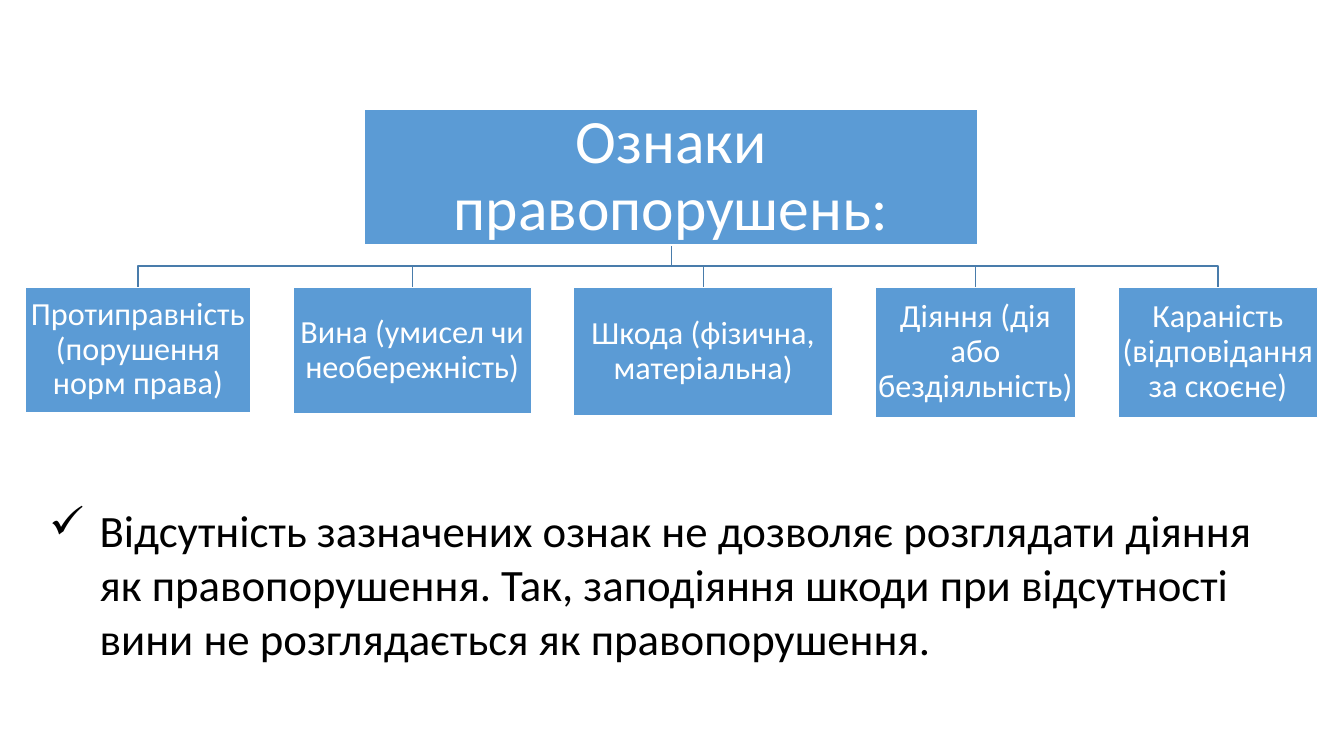
from lxml import etree
from pptx import Presentation
from pptx.dml.color import RGBColor
from pptx.enum import shapes, text
from pptx.oxml.ns import qn
from pptx.util import Inches, Pt

FONT = "Calibri"
BLUE, EDGE, WHITE, BLACK = "5B9BD5", "497CAB", "FFFFFF", "000000"
ROOT = (3.61, 1.08, 6.09, 1.35)
TRUNK, FORK, TOP = 6.66, 2.64, 2.85
LEFT, GAP = 0.25, 0.42
SIGNS = [
    ("Протиправність (порушення норм права)", 2.24, 1.24),
    ("Вина (умисел чи необережність)", 2.36, 1.26),
    ("Шкода (фізична, матеріальна)", 2.57, 1.27),
    ("Діяння (дія або бездіяльність)", 1.99, 1.29),
    ("Караність (відповідання за скоєне)", 1.98, 1.29),
]
NOTE = ("Відсутність зазначених ознак не дозволяє розглядати діяння як "
        "правопорушення. Так, заподіяння шкоди при відсутності вини не "
        "розглядається як правопорушення.")


def color(code):
    return RGBColor.from_string(code)


def write(frame, words, size, ink):
    """Fill the frame with one paragraph and return that paragraph."""
    frame.word_wrap = True
    para = frame.paragraphs[0]
    para.text = words
    font = para.runs[0].font
    font.name, font.size = FONT, Pt(size)
    font.color.rgb = color(ink)
    return para


def add_box(slide, place, words, size, inset):
    box = slide.shapes.add_shape(
        shapes.MSO_SHAPE.RECTANGLE, *map(Inches, place))
    box.shadow.inherit = False
    box.fill.solid()
    box.fill.fore_color.rgb = color(BLUE)
    box.line.color.rgb = color(WHITE)
    box.line.width = Pt(1)
    frame = box.text_frame
    frame.margin_left = frame.margin_right = Inches(inset)
    frame.margin_top = frame.margin_bottom = Inches(inset)
    frame.vertical_anchor = text.MSO_ANCHOR.MIDDLE
    para = write(frame, words, size, WHITE)
    para.alignment = text.PP_ALIGN.CENTER
    para.line_spacing = 0.9


def add_branch(slide, end):
    """Draw the bent line from the root box down to x = end."""
    start = ROOT[1] + ROOT[3]
    pen = slide.shapes.build_freeform(
        Inches(TRUNK), Inches(start), scale=1.0)
    points = [(TRUNK, FORK), (end, FORK), (end, TOP)]
    pen.add_line_segments(
        [(Inches(x), Inches(y)) for x, y in points], close=False)
    line = pen.convert_to_shape()
    line.shadow.inherit = False
    line.fill.background()
    line.line.color.rgb = color(EDGE)
    line.line.width = Pt(1)


def add_note(slide):
    box = slide.shapes.add_textbox(*map(Inches, (0.39, 4.94, 12.54, 1.72)))
    para = write(box.text_frame, NOTE, 32, BLACK)
    props = para._p.get_or_add_pPr()
    props.set("marL", str(Inches(0.5)))
    props.set("indent", str(Inches(-0.5)))
    etree.SubElement(props, qn("a:buChar")).set("char", "✓")


def main():
    deck = Presentation()
    deck.slide_width, deck.slide_height = Inches(13.33), Inches(7.5)
    slide = deck.slides.add_slide(deck.slide_layouts[6])

    left, boxes = LEFT, []
    for words, wide, high in SIGNS:
        boxes.append((words, (left, TOP, wide, high)))
        left += wide + GAP

    for _, place in boxes:
        add_branch(slide, place[0] + place[2] / 2)
    add_box(slide, ROOT, "Ознаки правопорушень:", 44, 0.03)
    for words, place in boxes:
        add_box(slide, place, words, 23, 0.02)
    add_note(slide)

    deck.save("out.pptx")


if __name__ == "__main__":
    main()
